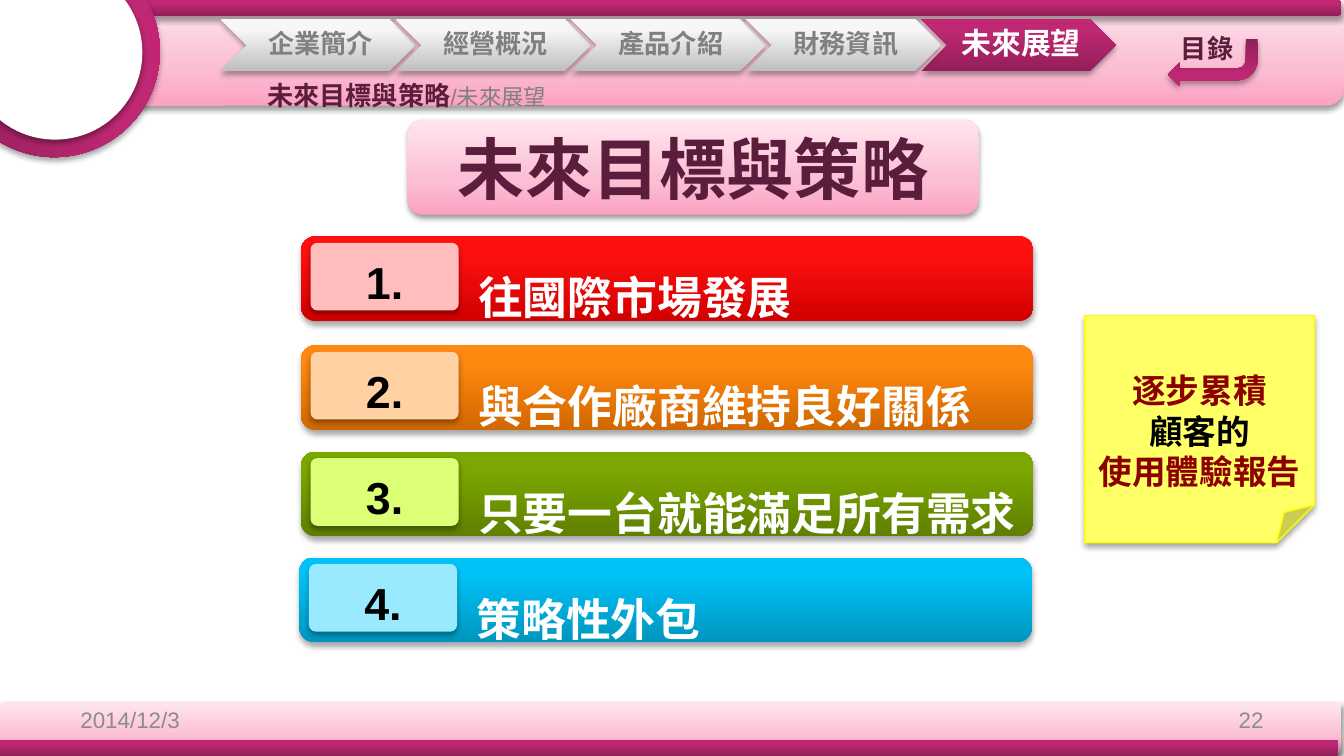
from lxml.etree import SubElement
from pptx import Presentation
from pptx.dml.color import RGBColor
from pptx.enum.shapes import MSO_SHAPE as Shape
from pptx.enum.text import MSO_ANCHOR as Anchor, PP_ALIGN as Align
from pptx.oxml.ns import qn
from pptx.util import Cm, Pt


class Theme:
    font = "Arial"
    pink = ("FBA2C2", 35, "FBBED4", "FFE5EE")
    magenta = ("931F59", 80, "BF2873", "C32574")
    silver = ("BEBEBE", 80, "F7F7F7", "F8F8F8")
    red = ("D10000", 80, "FF1010", "FF1212")
    orange = ("D16800", 80, "FF8810", "FF8812")
    green = ("5F8000", 80, "7BA700", "7CA700")
    blue = ("0095BE", 80, "00C2F7", "00C3F8")
    red_tile, orange_tile, green_tile, blue_tile = "FFBDBD", "FFD1A3", "DCFF78", "99E9FF"
    white, black, gray, footer_gray = "FFFFFF", "000000", "808080", "8C8C8C"
    plum, dark_red, note, note_line = "5A1D3C", "8C0000", "FFFF66", "FFFF00"
    title, goal, emphasis, active, label, small = 36, 24, 18, 16, 14, 12


def draw(kind, box, fill, margins=(0.25, 0.13, 0.25, 0.13)):
    shape = slide.shapes.add_shape(kind, *map(Cm, box))
    shape.shadow.inherit = False
    shape.line.fill.background()
    shape.fill.solid()
    properties = shape._element.spPr
    if isinstance(fill, str):
        shape.fill.fore_color.rgb = RGBColor.from_string(fill)
    else:
        bottom, middle_stop, middle, top = fill
        solid = properties.find(qn("a:solidFill"))
        gradient = SubElement(properties, qn("a:gradFill"), rotWithShape="1")
        properties.replace(solid, gradient)
        stops = SubElement(gradient, qn("a:gsLst"))
        for position, color in ((0, bottom), (middle_stop, middle), (100, top)):
            stop = SubElement(stops, qn("a:gs"), pos=str(position * 1000))
            SubElement(stop, qn("a:srgbClr"), val=color)
        SubElement(gradient, qn("a:lin"), ang="16200000", scaled="0")
    distance, opacity = ("20000", "38000") if fill == Theme.pink else ("23000", "35000")
    shadow = SubElement(properties.find(qn("a:effectLst")), qn("a:outerShdw"),
                        blurRad="40000", dist=distance, dir="5400000", rotWithShape="0")
    shadow_color = SubElement(shadow, qn("a:srgbClr"), val=Theme.black)
    SubElement(shadow_color, qn("a:alpha"), val=opacity)
    frame = shape.text_frame
    frame.margin_left, frame.margin_top, frame.margin_right, frame.margin_bottom = map(Cm, margins)
    frame.vertical_anchor = Anchor.MIDDLE
    frame.paragraphs[0].alignment = Align.CENTER
    return shape


def write(paragraph, text, size, color, bold=True):
    run = paragraph.add_run()
    run.text = text
    run.font.name = Theme.font
    run.font.size = Pt(size)
    run.font.bold = bold
    run.font.color.rgb = RGBColor.from_string(color)


presentation = Presentation()
presentation.slide_width, presentation.slide_height = Cm(25.4), Cm(14.29)
slide = presentation.slides.add_slide(presentation.slide_layouts[6])

draw(Shape.ROUND_2_DIAG_RECTANGLE, (-0.05, 13.28, 25.4, 1), Theme.pink)
draw(Shape.ROUND_2_DIAG_RECTANGLE, (0, 0, 25.4, 2), Theme.pink)
draw(Shape.ROUNDED_RECTANGLE, (0, 0, 25.35, 0.3), Theme.magenta)
draw(Shape.ROUNDED_RECTANGLE, (-0.05, 13.99, 25.35, 0.3), Theme.magenta)
for left, top, diameter, fill in ((-0.97, -1.02, 3.99, Theme.magenta),
                                  (-0.61, -0.66, 3.3, Theme.white)):
    draw(Shape.OVAL, (left, top, diameter, diameter), fill).rotation = 86

tabs = ["企業簡介", "經營概況", "產品介紹", "財務資訊", "未來展望"]
active_tab = len(tabs) - 1
for index in (active_tab, *range(active_tab)):
    is_active = index == active_tab
    tab = draw(Shape.CHEVRON, (4.17 + 3.31 * index, 0.36, 3.68, 0.99),
               Theme.magenta if is_active else Theme.silver, (0.15, 0.05, 0.05, 0.05))
    tab.text_frame.word_wrap = False
    paragraph = tab.text_frame.paragraphs[0]
    paragraph.line_spacing = 0.9
    write(paragraph, tabs[index], Theme.active if is_active else Theme.label,
          Theme.white if is_active else Theme.gray)

contents_arrow = draw(Shape.BENT_ARROW, (22.07, 0.74, 1.7, 0.89), Theme.magenta)
transform = contents_arrow._element.spPr.find(qn("a:xfrm"))
transform.set("flipH", "1")
transform.set("flipV", "1")

title = draw(Shape.ROUNDED_RECTANGLE, (7.7, 2.26, 10.8, 1.8), Theme.pink)
write(title.text_frame.paragraphs[0], "未來目標與策略", Theme.title, Theme.plum)

goals = [
    (5.69, 4.47, "往國際市場發展", Theme.red, Theme.red_tile),
    (5.69, 6.53, "與合作廠商維持良好關係", Theme.orange, Theme.orange_tile),
    (5.69, 8.54, "只要一台就能滿足所有需求", Theme.green, Theme.green_tile),
    (5.66, 10.54, "策略性外包", Theme.blue, Theme.blue_tile),
]
for number, (left, top, text, bar_fill, tile_fill) in enumerate(goals, 1):
    bar = draw(Shape.ROUNDED_RECTANGLE, (left, top, 13.84, 1.6), bar_fill, (3.27, 0.05, 0.05, 0.05))
    bar.text_frame.vertical_anchor = Anchor.TOP
    paragraph = bar.text_frame.paragraphs[0]
    paragraph.alignment = Align.LEFT
    paragraph.line_spacing = 1.5
    write(paragraph, text, Theme.goal, Theme.white)
    tile = draw(Shape.ROUNDED_RECTANGLE, (left + 0.18, top + 0.12, 2.8, 1.28), tile_fill,
                (0.25, 0.17, 0.25, 0))
    tile.adjustments[0] = 0.1
    write(tile.text_frame.paragraphs[0], f"{number}.", Theme.goal, Theme.black)

note = draw(Shape.FOLDED_CORNER, (20.5, 5.97, 4.34, 4.29), Theme.note, (0.15, 0.9, 0.15, 0.13))
note.line.color.rgb = RGBColor.from_string(Theme.note_line)
note.line.width = Pt(0.75)
paragraph = note.text_frame.paragraphs[0]
write(paragraph, "逐步累積", Theme.emphasis, Theme.dark_red)
paragraph.add_line_break()
write(paragraph, "顧客的", Theme.emphasis, Theme.black)
paragraph.add_line_break()
write(paragraph, "使用體驗報告", Theme.emphasis, Theme.dark_red)

labels = [
    ((22.07, 0.48, 2.36, 0.86), Align.LEFT, Anchor.TOP,
     [("目錄", Theme.label, Theme.plum, True)]),
    ((1.27, 13.23, 5.92, 0.76), Align.LEFT, Anchor.MIDDLE,
     [("2014/12/3", Theme.small, Theme.footer_gray, False)]),
    ((18.21, 13.23, 5.92, 0.76), Align.RIGHT, Anchor.MIDDLE,
     [("22", Theme.small, Theme.footer_gray, False)]),
    ((4.8, 1.37, 19.3, 0.86), Align.LEFT, Anchor.TOP,
     [("未來目標與策略", Theme.label, Theme.plum, True),
      ("/未來展望", Theme.small, Theme.gray, False)]),
]
for box, alignment, anchor, runs in labels:
    frame = slide.shapes.add_textbox(*map(Cm, box)).text_frame
    frame.word_wrap = True
    frame.vertical_anchor = anchor
    paragraph = frame.paragraphs[0]
    paragraph.alignment = alignment
    for run in runs:
        write(paragraph, *run)

presentation.save("out.pptx")
